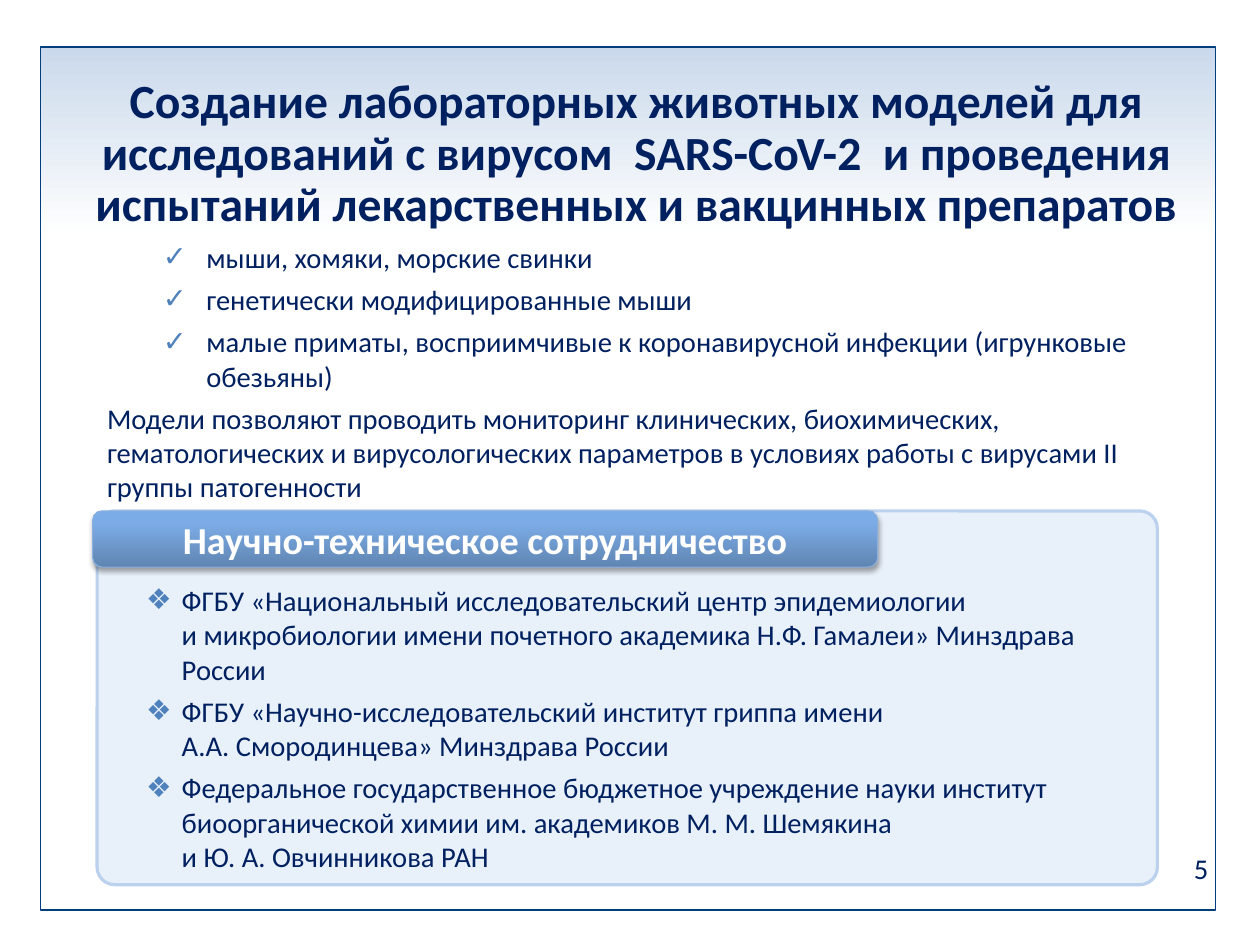
from pptx import Presentation
from pptx.dml.color import RGBColor
from pptx.enum.shapes import MSO_SHAPE
from pptx.enum.text import MSO_ANCHOR, PP_ALIGN
from pptx.oxml.ns import qn
from pptx.util import Cm, Pt
from lxml import etree

RECT, ROUND = MSO_SHAPE.RECTANGLE, MSO_SHAPE.ROUNDED_RECTANGLE
LEFT, CENTER = PP_ALIGN.LEFT, PP_ALIGN.CENTER
TOP, MIDDLE = MSO_ANCHOR.TOP, MSO_ANCHOR.MIDDLE
FONT, NAVY, WHITE, BULLET = "Calibri", "002060", "FFFFFF", "4F81BD"

prs = Presentation()
prs.slide_width, prs.slide_height = Cm(28.01), Cm(21.01)
s = prs.slides.add_slide(prs.slide_layouts[6])


def add_box(shape, x, y, w, h, fill=None, line=None, width=1):
    """Shape with a plain fill, a vertical gradient (bottom to top) or none."""
    sp = s.shapes.add_shape(shape, Cm(x), Cm(y), Cm(w), Cm(h))
    sp.shadow.inherit = False
    if isinstance(fill, list):
        sp.fill.gradient()
        sp.fill.gradient_angle = 90
        for stop, (position, color) in zip(sp.fill.gradient_stops, fill):
            stop.position = position
            stop.color.rgb = RGBColor.from_string(color)
    elif fill:
        sp.fill.solid()
        sp.fill.fore_color.rgb = RGBColor.from_string(fill)
    else:
        sp.fill.background()
    if line:
        sp.line.color.rgb = RGBColor.from_string(line)
        sp.line.width = Pt(width)
    else:
        sp.line.fill.background()
    return sp


def add_text(sp, lines, size=18, color=NAVY, bold=False, align=LEFT, anchor=TOP,
             wrap=True, before=0, spacing=None, bullet=None, margin=0, indent=0):
    """Paragraphs in one format, added after any text already in the shape."""
    tf = sp.text_frame
    tf.word_wrap, tf.vertical_anchor = wrap, anchor
    for line in lines:
        p = tf.add_paragraph() if tf.text else tf.paragraphs[0]
        p.text, p.alignment = line, align
        p.space_before, p.line_spacing = Pt(before), spacing
        for r in p.runs:
            r.font.name, r.font.size, r.font.bold = FONT, Pt(size), bold
            r.font.color.rgb = RGBColor.from_string(color)
        pPr = p._p.get_or_add_pPr()
        pPr.set("marL", str(Cm(margin)))
        pPr.set("indent", str(Cm(indent)))
        if bullet:
            clr = etree.SubElement(pPr, qn("a:buClr"))
            etree.SubElement(clr, qn("a:srgbClr"), val=BULLET)
            etree.SubElement(pPr, qn("a:buFont"), typeface=FONT)
            etree.SubElement(pPr, qn("a:buChar"), char=bullet)


# Cooperation panel, header gradient and slide frame
panel = add_box(ROUND, 2.16, 11.36, 23.57, 8.31, "E8F0F9", "BBD1EE", 2)
panel.adjustments[0] = 0.047
add_box(RECT, 0.9, 1.04, 26.14, 6.73, [(0.37, WHITE), (1, "CAD9EB")])
add_box(RECT, 0.9, 1.04, 26.12, 19.2, line="003F7B")

# Panel heading with a soft shadow
heading = add_box(ROUND, 2.06, 11.36, 17.45, 1.25,
                  [(0, "6085B2"), (0.8, "7CACE7")], "88AFDF", 0.75)
effects = heading._element.spPr.find(qn("a:effectLst"))
shadow = etree.SubElement(effects, qn("a:outerShdw"), blurRad=str(Pt(3.1)),
                          dist=str(Pt(1.8)), dir="5400000", rotWithShape="0")
shadow_color = etree.SubElement(shadow, qn("a:srgbClr"), val="000000")
etree.SubElement(shadow_color, qn("a:alpha"), val="35000")
add_text(heading, ["Научно-техническое сотрудничество"], size=24, color=WHITE,
         bold=True, align=CENTER, anchor=MIDDLE)

# Title
title = s.shapes.add_textbox(Cm(2), Cm(1.73), Cm(24.31), Cm(3.45))
tf = title.text_frame
tf.margin_left = tf.margin_right = tf.margin_top = tf.margin_bottom = 0
add_text(title, ["Создание лабораторных животных моделей для исследований с вирусом  "
                 "SARS-CoV-2  и проведения испытаний лекарственных и вакцинных препаратов"],
         size=30, bold=True, align=CENTER, spacing=0.9)

# Animal models
models = s.shapes.add_textbox(Cm(1.88), Cm(5.21), Cm(24.43), Cm(6.17))
add_text(models, [
    "мыши, хомяки, морские свинки",
    "генетически модифицированные мыши",
    "малые приматы, восприимчивые к коронавирусной инфекции (игрунковые обезьяны)",
], before=5, bullet="✓", margin=2.46, indent=-0.97)
add_text(models, [
    "Модели позволяют проводить мониторинг клинических, биохимических, "
    "гематологических и вирусологических параметров в условиях работы "
    "с вирусами II группы патогенности",
], before=5, margin=0.25)

# Partner institutes
partners = s.shapes.add_textbox(Cm(3), Cm(12.84), Cm(22.25), Cm(6.76))
add_text(partners, [
    "ФГБУ «Национальный исследовательский центр эпидемиологии \n"
    "и микробиологии имени почетного академика Н.Ф. Гамалеи» Минздрава России",
    "ФГБУ «Научно-исследовательский институт гриппа имени \n"
    "А.А. Смородинцева» Минздрава России",
    "Федеральное государственное бюджетное учреждение науки институт "
    "биоорганической химии им. академиков М. М. Шемякина \n"
    "и Ю. А. Овчинникова РАН",
], before=5, bullet="❖", margin=0.79, indent=-0.79)

# Slide number
number = s.shapes.add_textbox(Cm(26.29), Cm(18.8), Cm(0.84), Cm(1.02))
add_text(number, ["5"], wrap=False)

prs.save("out.pptx")
